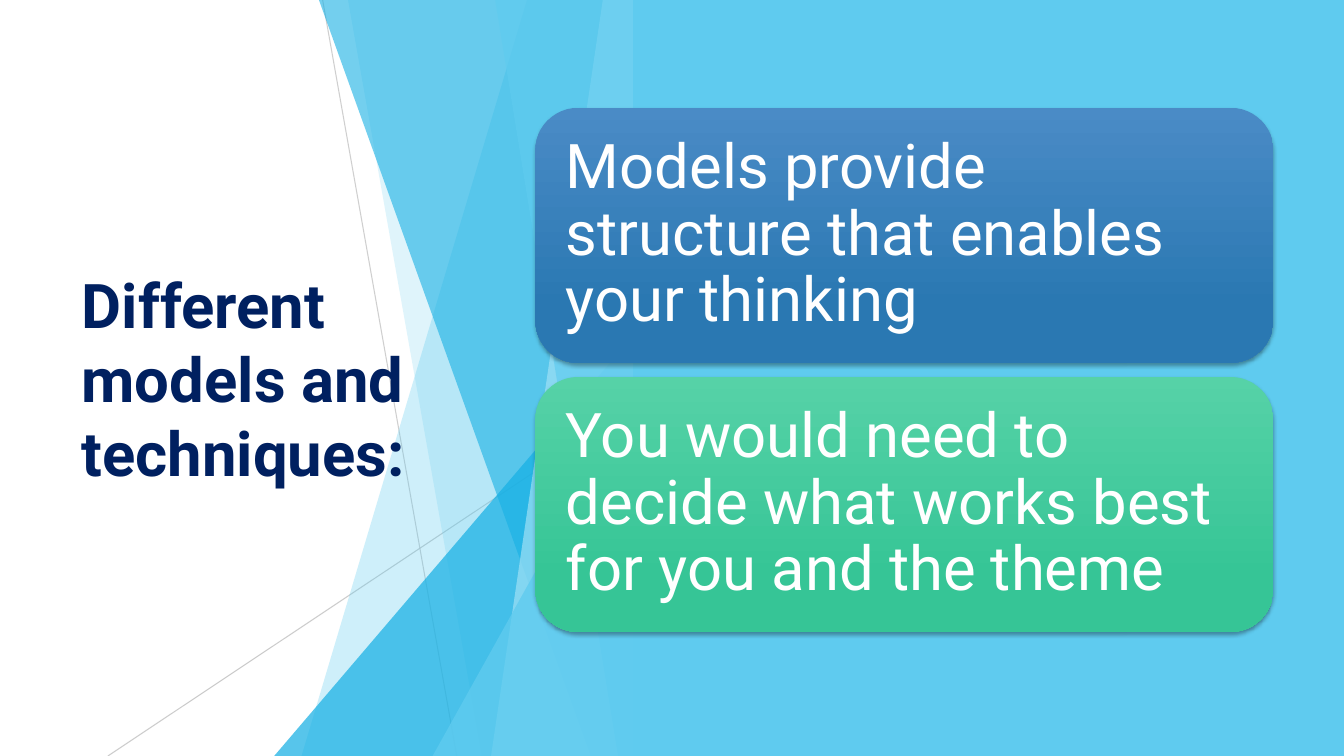
from lxml import etree
from pptx import Presentation
from pptx.dml.color import RGBColor
from pptx.enum.shapes import MSO_CONNECTOR, MSO_SHAPE
from pptx.enum.text import MSO_ANCHOR, PP_ALIGN
from pptx.oxml.ns import qn
from pptx.util import Inches, Pt

LINE = MSO_CONNECTOR.STRAIGHT
RECT = MSO_SHAPE.RECTANGLE
ROUND = MSO_SHAPE.ROUNDED_RECTANGLE
TRIANGLE = MSO_SHAPE.ISOSCELES_TRIANGLE
MIDDLE = MSO_ANCHOR.MIDDLE
LEFT = PP_ALIGN.LEFT

WIDE, HIGH = 13.33, 7.5
EDGE = 6.28  # where the facets meet the side panel
TOP = -0.01
SKY, BLUE, PALE, GREY = "5FCBEF", "17B0E4", "9FE0F5", "BFBFBF"
NAVY, WHITE = "002060", "FFFFFF"


def color(code):
    return RGBColor.from_string(code)


def fade(shape, percent):
    for tint in shape._element.spPr.iter(qn("a:srgbClr")):
        etree.SubElement(tint, qn("a:alpha"), val=str(percent * 1000))


class Deck:
    font = "Roboto"
    size = 44

    def __init__(self):
        self.file = Presentation()
        self.file.slide_width = Inches(WIDE)
        self.file.slide_height = Inches(HIGH)
        self.slide = self.file.slides.add_slide(self.file.slide_layouts[5])
        self.group = self.slide.shapes.add_group_shape()

    def paint(self, shape, fill, alpha=100):
        shape.shadow.inherit = False
        shape.line.fill.background()
        shape.fill.solid()
        shape.fill.fore_color.rgb = color(fill)
        if alpha < 100:
            fade(shape, alpha)

    def label(self, shape, text, tint, bold=False):
        frame = shape.text_frame
        frame.word_wrap = True
        frame.vertical_anchor = MIDDLE
        para = frame.paragraphs[0]
        para.alignment = LEFT
        run = para.add_run()
        run.text = text
        run.font.name = self.font
        run.font.size = Pt(self.size)
        run.font.bold = bold
        run.font.color.rgb = color(tint)
        return frame

    def line(self, x1, y1, x2, y2, alpha):
        ends = [Inches(n) for n in (x1, y1, x2, y2)]
        line = self.group.shapes.add_connector(LINE, *ends)
        line.line.color.rgb = color(GREY)
        line.line.width = Pt(0.75)
        fade(line, alpha)
        etree.SubElement(line._element.spPr, qn("a:effectLst"))

    def facet(self, top, base, fill, alpha):
        """Slanted left side from top to base, straight right side at EDGE."""
        pen = self.group.shapes.build_freeform(Inches(top), Inches(TOP))
        spots = [(EDGE, TOP), (EDGE, HIGH), (base, HIGH)]
        pen.add_line_segments([(Inches(x), Inches(y)) for x, y in spots])
        self.paint(pen.convert_to_shape(), fill, alpha)

    def wedge(self, x, y, fill, alpha):
        """Triangle whose peak touches EDGE."""
        shape = self.group.shapes.add_shape(
            TRIANGLE, Inches(x), Inches(y), Inches(EDGE - x), Inches(HIGH - y))
        shape.adjustments[0] = 1
        self.paint(shape, fill, alpha)

    def panel(self, x, fill):
        shape = self.slide.shapes.add_shape(
            RECT, Inches(x), 0, Inches(WIDE - x), Inches(HIGH))
        self.paint(shape, fill)

    def title(self, text, x, y, w, h):
        title = self.slide.shapes.title
        title.left, title.top = Inches(x), Inches(y)
        title.width, title.height = Inches(w), Inches(h)
        self.label(title, text, NAVY, bold=True)
        # Bring the title in front of the facets
        self.group._element.addnext(title._element)

    def card(self, text, x, y, w, h, light, dark):
        card = self.slide.shapes.add_shape(
            ROUND, Inches(x), Inches(y), Inches(w), Inches(h))
        card.line.fill.background()
        card.fill.gradient()
        card.fill.gradient_angle = 270
        stops = card.fill.gradient_stops
        for stop, tint, place in zip(stops, (light, dark), (0, 0.78)):
            stop.color.rgb = color(tint)
            stop.position = place
        self.shade(card)
        frame = self.label(card, text, WHITE)
        frame.paragraphs[0].line_spacing = 0.9
        frame.margin_left = frame.margin_right = Inches(0.18)
        frame.margin_top = frame.margin_bottom = Inches(0.18)

    def shade(self, shape):
        shape.shadow.inherit = False
        effects = shape._element.spPr.find(qn("a:effectLst"))
        drop = etree.SubElement(
            effects, qn("a:outerShdw"), blurRad=str(Pt(3)), dist=str(Pt(2)),
            dir="5400000", rotWithShape="0")
        tint = etree.SubElement(drop, qn("a:srgbClr"), val="000000")
        etree.SubElement(tint, qn("a:alpha"), val="35000")


def main():
    deck = Deck()

    # Facets behind the title
    deck.line(3.2, 0, 4.53, HIGH, 75)
    deck.line(EDGE, 4.03, 1.07, HIGH, 80)
    deck.facet(5.23, 2.99, SKY, 30)
    deck.facet(3.45, 4.78, SKY, 20)
    deck.wedge(2.72, 3.33, BLUE, 72)
    deck.facet(3.16, 5.86, BLUE, 60)
    deck.facet(5.98, 4.87, PALE, 70)
    deck.facet(4.91, 6.13, SKY, 65)
    deck.wedge(4.29, 3.93, SKY, 80)

    # Title and side panel
    deck.title("Different models and techniques:", 0.71, 1.51, 3.88, 4.48)
    deck.panel(EDGE, SKY)

    # Cards, stacked at an equal step
    cards = [
        ("Models provide structure that enables your thinking",
         "4A8BC6", "2A78B2"),
        ("You would need to decide what works best for you and the theme",
         "56D2A7", "36C596"),
    ]
    for row, (text, light, dark) in enumerate(cards):
        deck.card(text, 5.31, 1.07 + row * 2.67, 7.32, 2.53, light, dark)

    deck.file.save("out.pptx")


if __name__ == "__main__":
    main()
